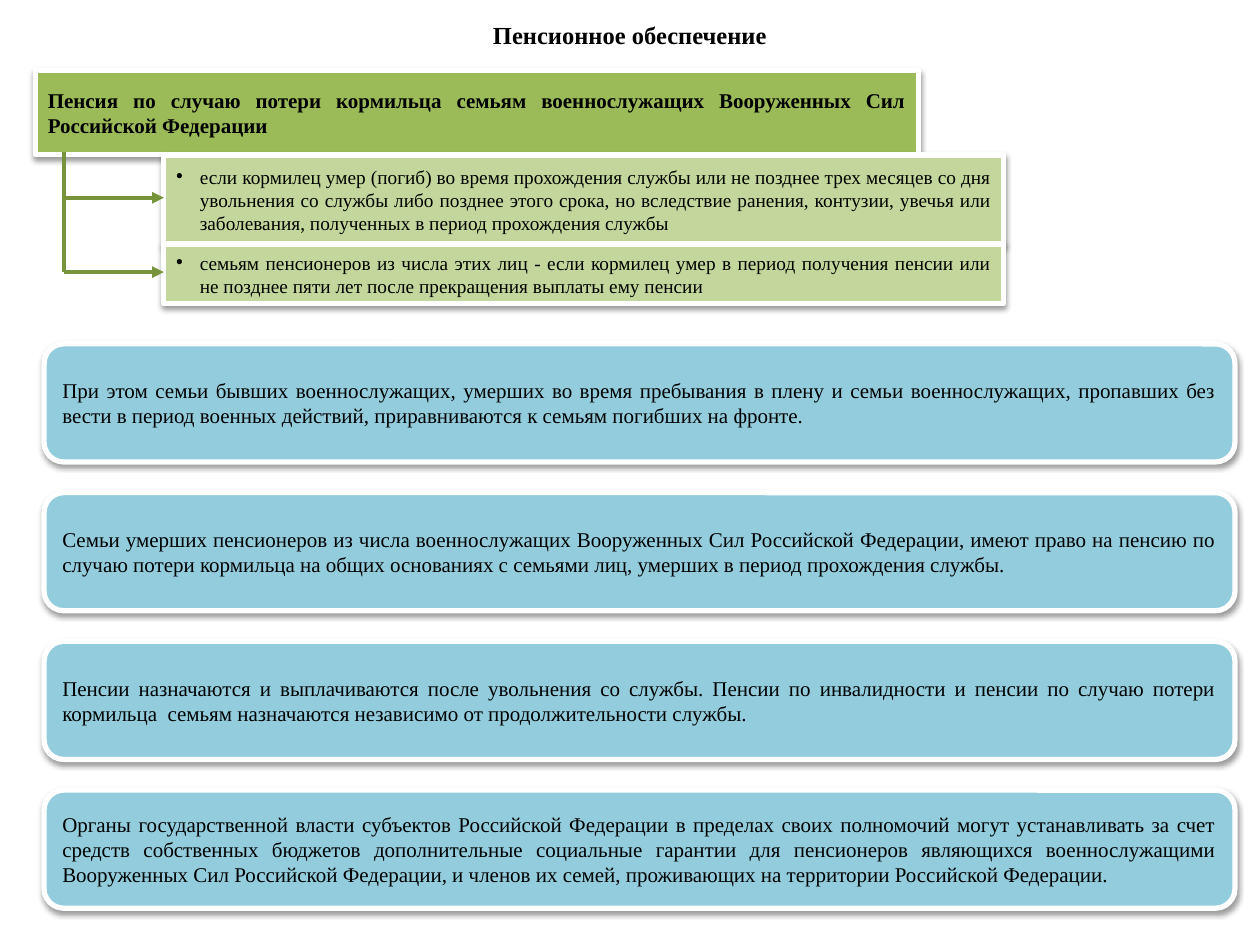
"""Build the slide on survivor pensions for families of military personnel."""
import lxml.etree
import pptx
import pptx.dml.color
import pptx.enum.shapes
import pptx.enum.text
import pptx.oxml.ns
import pptx.util

Pt = pptx.util.Pt
qn = pptx.oxml.ns.qn
SHAPES = pptx.enum.shapes.MSO_SHAPE
ALIGN = pptx.enum.text.PP_ALIGN
ANCHOR = pptx.enum.text.MSO_ANCHOR

FONT = "Times New Roman"
BLACK, WHITE = "000000", "FFFFFF"
GREEN, LIGHT_GREEN, DARK_GREEN, BLUE = "9BBB59", "C3D69B", "77933C", "93CDDD"

TITLE = "Пенсионное обеспечение"
HEADING = "Пенсия по случаю потери кормильца семьям военнослужащих Вооруженных Сил Российской Федерации"
CONDITIONS = [
    (51, "если кормилец умер (погиб) во время прохождения службы или не позднее трех месяцев со дня "
         "увольнения со службы либо позднее этого срока, но вследствие ранения, контузии, увечья или "
         "заболевания, полученных в период прохождения службы"),
    (34, "семьям пенсионеров из числа этих лиц - если кормилец умер в период получения пенсии или "
         "не позднее пяти лет после прекращения выплаты ему пенсии"),
]
NOTES = [
    "При этом семьи бывших военнослужащих, умерших во время пребывания в плену и семьи "
    "военнослужащих, пропавших без вести в период военных действий, приравниваются к семьям "
    "погибших на фронте.",
    "Семьи умерших пенсионеров из числа военнослужащих Вооруженных Сил Российской Федерации, имеют "
    "право на пенсию по случаю потери кормильца на общих основаниях с семьями лиц, умерших в период "
    "прохождения службы.",
    "Пенсии назначаются и выплачиваются после увольнения со службы. Пенсии по инвалидности и пенсии "
    "по случаю потери кормильца  семьям назначаются независимо от продолжительности службы.",
    "Органы государственной власти субъектов Российской Федерации в пределах своих полномочий могут "
    "устанавливать за счет средств собственных бюджетов дополнительные социальные гарантии для "
    "пенсионеров являющихся военнослужащими Вооруженных Сил Российской Федерации, и членов их семей, "
    "проживающих на территории Российской Федерации.",
]

CONDITION_LEFT, CONDITION_TOP, CONDITION_WIDTH = 93.6, 88.5, 480
NOTE_LEFT, NOTE_TOP, NOTE_WIDTH, NOTE_HEIGHT, NOTE_STEP = 25.2, 196.5, 680.5, 67.5, 85
TRUNK_LEFT, TRUNK_TOP = 36.7, 87


def color(value):
    return pptx.dml.color.RGBColor.from_string(value)


def add_element(parent, tag, **attributes):
    return lxml.etree.SubElement(parent, qn(tag), attributes)


def write(text_frame, text, size, bold, alignment):
    text_frame.text = text
    paragraph = text_frame.paragraphs[0]
    paragraph.alignment = alignment
    font = paragraph.runs[0].font
    font.name, font.size, font.bold = FONT, Pt(size), bold
    font.color.rgb = color(BLACK)
    return paragraph


def add_shadow(shape):
    shape.shadow.inherit = False
    effects = shape._element.spPr.find(qn("a:effectLst"))
    shadow = add_element(effects, "a:outerShdw", blurRad=str(Pt(3.1)), dist=str(Pt(1.6)),
                         dir="5400000", rotWithShape="0")
    shadow_color = add_element(shadow, "a:srgbClr", val=BLACK)
    add_element(shadow_color, "a:alpha", val="38000")


def add_box(slide, kind, bounds, fill, text, size=12, bold=False):
    shape = slide.shapes.add_shape(kind, *map(Pt, bounds))
    shape.fill.solid()
    shape.fill.fore_color.rgb = color(fill)
    shape.line.color.rgb = color(WHITE)
    shape.line.width = Pt(3)
    add_shadow(shape)
    shape.text_frame.word_wrap = True
    shape.text_frame.vertical_anchor = ANCHOR.MIDDLE
    return write(shape.text_frame, text, size, bold, ALIGN.JUSTIFY)


def add_bullet(paragraph):
    properties = paragraph._p.get_or_add_pPr()
    properties.set("marL", str(Pt(13.5)))
    properties.set("indent", str(Pt(-13.5)))
    add_element(properties, "a:buFont", typeface="Arial")
    add_element(properties, "a:buChar", char="•")


def add_line(slide, start, end, arrow=False):
    connector = slide.shapes.add_connector(
        pptx.enum.shapes.MSO_CONNECTOR.STRAIGHT, *map(Pt, start + end))
    connector.line.color.rgb = color(DARK_GREEN)
    connector.line.width = Pt(2.25)
    if arrow:
        add_element(connector.line._get_or_add_ln(), "a:tailEnd", type="triangle")
    add_element(connector._element.spPr, "a:effectLst")


def add_title(slide):
    title = slide.shapes.title
    title.left, title.top, title.width, title.height = map(Pt, (273.6, 8, 172.8, 24.5))
    text_frame = title.text_frame
    text_frame.auto_size = pptx.enum.text.MSO_AUTO_SIZE.NONE
    text_frame.word_wrap = False
    text_frame.vertical_anchor = ANCHOR.TOP
    write(text_frame, TITLE, 14, True, ALIGN.CENTER)


def add_conditions(slide):
    add_box(slide, SHAPES.RECTANGLE, (20.2, 40.3, 504.7, 48.2), GREEN, HEADING, bold=True)
    top, middles = CONDITION_TOP, []
    for height, text in CONDITIONS:
        bounds = (CONDITION_LEFT, top, CONDITION_WIDTH, height)
        add_bullet(add_box(slide, SHAPES.RECTANGLE, bounds, LIGHT_GREEN, text, size=11))
        middles.append(top + height / 2 - 1)
        top += height
    for middle in middles:
        add_line(slide, (TRUNK_LEFT, middle), (CONDITION_LEFT, middle), arrow=True)
    add_line(slide, (TRUNK_LEFT, TRUNK_TOP), (TRUNK_LEFT, middles[-1]))


def add_notes(slide):
    for index, text in enumerate(NOTES):
        bounds = (NOTE_LEFT, NOTE_TOP + index * NOTE_STEP, NOTE_WIDTH, NOTE_HEIGHT)
        add_box(slide, SHAPES.ROUNDED_RECTANGLE, bounds, BLUE, text)


def main():
    presentation = pptx.Presentation()
    presentation.slide_width, presentation.slide_height = Pt(720), Pt(540)
    slide = presentation.slides.add_slide(presentation.slide_layouts[5])
    add_title(slide)
    add_conditions(slide)
    add_notes(slide)
    presentation.save("out.pptx")


if __name__ == "__main__":
    main()
